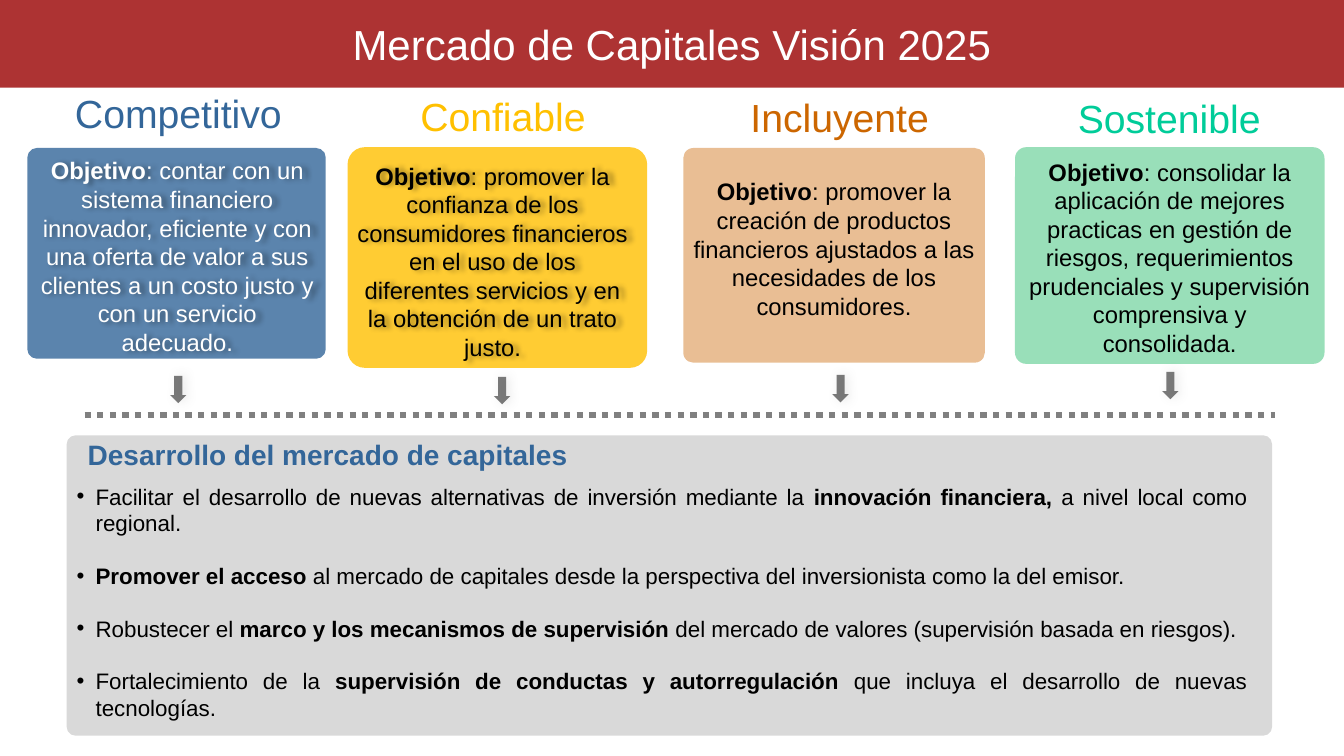
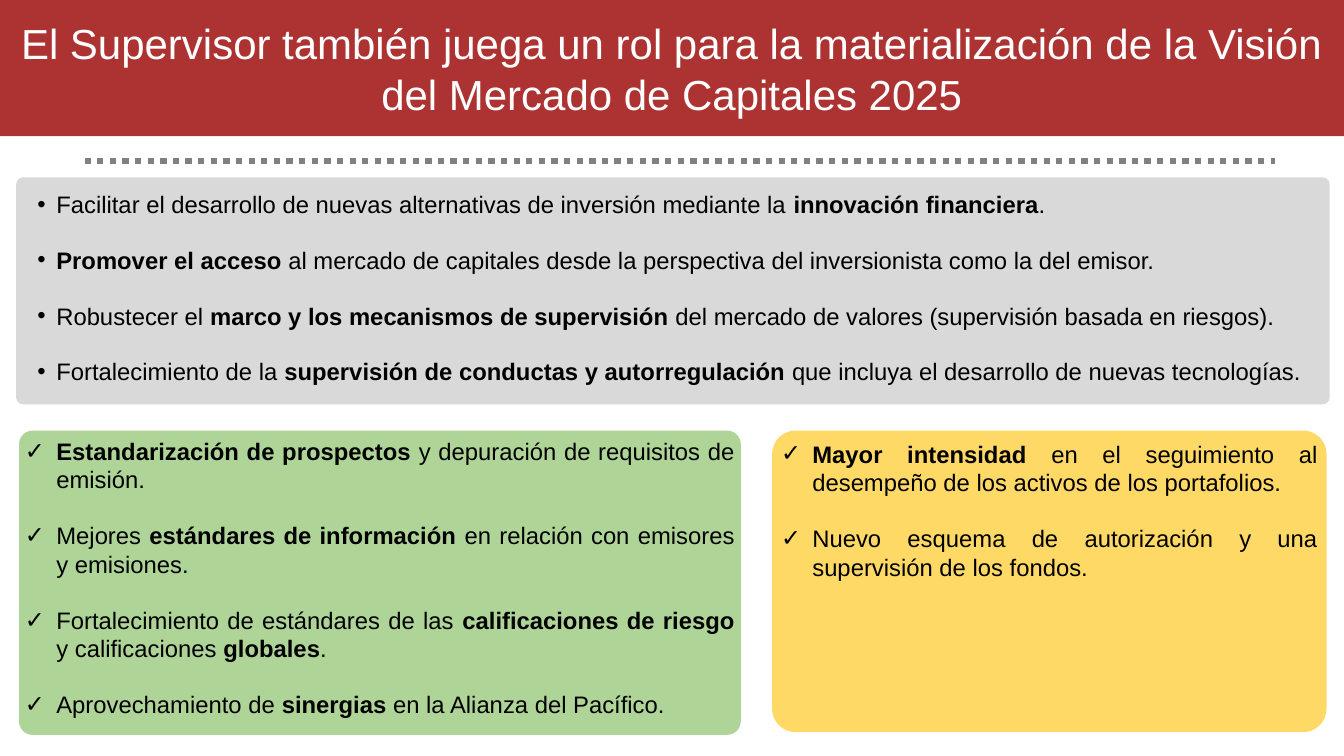
import lxml.etree
import pptx
import pptx.dml.color
import pptx.enum.shapes
import pptx.enum.text
import pptx.oxml.ns
import pptx.util

Cm = pptx.util.Cm
Pt = pptx.util.Pt
SHAPES = pptx.enum.shapes.MSO_SHAPE
ALIGN = pptx.enum.text.PP_ALIGN
ANCHOR = pptx.enum.text.MSO_ANCHOR
qn = pptx.oxml.ns.qn

SLIDE_WIDTH, SLIDE_HEIGHT = 33.87, 19.05
FONT = "Arial"
LINE_HEIGHT = 1.15
COLORS = {
    "band": "AD3333", "white": "FFFFFF", "black": "000000",
    "blue": "336699", "gold": "FFC000", "orange": "CC6600",
    "teal": "00CC99", "green": "00B050", "panel": "D9D9D9",
    "rule": "808080", "arrow": "595959", "shadow": "BFBFBF",
    "light green": "AFD498", "light gold": "FFD966",
}

# Heading, colour, heading box, card fill, opacity, card box, corner,
# objective, text colour, text box, text shadow, arrow position
PILLARS = [
    ("Competitivo", "blue", (0.61, 1.85, 7.77, 2.01),
     "blue", 80, (0.69, 3.73, 7.52, 5.31), 0.045,
     "contar con un sistema financiero innovador, eficiente y con una oferta "
     "de valor a sus clientes a un costo justo y con un servicio adecuado.",
     "white", (0.74, 3.81, 7.46, 2.84), True, (4.29, 9.47)),
    ("Confiable", "gold", (8.33, 1.75, 8.69, 2.34),
     "gold", 80, (8.76, 3.71, 7.55, 5.56), 0.078,
     "promover la confianza de los consumidores financieros en el uso de los "
     "diferentes servicios y en la obtención de un trato justo.",
     "black", (8.74, 3.94, 7.35, 2.84), True, (12.45, 9.5)),
    ("Incluyente", "orange", (17.78, 1.78, 6.76, 2.34),
     "orange", 42, (17.22, 3.73, 7.6, 5.41), 0.047,
     "promover la creación de productos financieros ajustados a las "
     "necesidades de los consumidores.",
     "black", (17.22, 4.34, 7.6, 2.84), False, (20.98, 9.45)),
    ("Sostenible", "teal", (25.58, 1.8, 7.77, 2.34),
     "green", 40, (25.58, 3.71, 7.8, 5.46), 0.052,
     "consolidar la aplicación de mejores practicas en gestión de riesgos, "
     "requerimientos prudenciales y supervisión comprensiva y consolidada.",
     "black", (25.58, 3.84, 7.8, 2.84), False, (29.29, 9.37)),
]

# Asterisks enclose bold text
INNOVATION = ("Facilitar el desarrollo de nuevas alternativas de inversión "
              "mediante la *innovación financiera")
SHARED_GOALS = [
    "*Promover el acceso* al mercado de capitales desde la perspectiva del "
    "inversionista como la del emisor.",
    "Robustecer el *marco y los mecanismos de supervisión* del mercado de "
    "valores (supervisión basada en riesgos).",
    "Fortalecimiento de la *supervisión de conductas y autorregulación* que "
    "incluya el desarrollo de nuevas tecnologías.",
]
ISSUER_ACTIONS = [
    "*Estandarización de prospectos* y depuración de requisitos de emisión.",
    "Mejores *estándares de información* en relación con emisores y emisiones.",
    "Fortalecimiento de estándares de las *calificaciones de riesgo* y "
    "calificaciones *globales*.",
    "Aprovechamiento de *sinergias* en la Alianza del Pacífico.",
]
FUND_ACTIONS = [
    "*Mayor intensidad* en el seguimiento al desempeño de los activos de los "
    "portafolios.",
    "Nuevo esquema de autorización y una supervisión de los fondos.",
]


def rgb(color):
    return pptx.dml.color.RGBColor.from_string(COLORS[color])


def add_alpha(color_element, percent):
    alpha = lxml.etree.SubElement(color_element, qn("a:alpha"))
    alpha.set("val", str(percent * 1000))


def add_shadow(shape, color, blur, distance):
    """Give a shape a soft shadow to its right."""
    shape.shadow.inherit = False
    effects = shape._element.spPr.find(qn("a:effectLst"))
    outer = lxml.etree.SubElement(effects, qn("a:outerShdw"))
    outer.set("blurRad", str(Pt(blur)))
    outer.set("dist", str(Pt(distance)))
    outer.set("dir", "0")
    tint = lxml.etree.SubElement(outer, qn("a:srgbClr"))
    tint.set("val", COLORS[color])
    add_alpha(tint, 40)


def add_filled_shape(slide, kind, box, color, opacity=100, corner=None):
    shape = slide.shapes.add_shape(kind, *map(Cm, box))
    shape.shadow.inherit = False
    shape.line.fill.background()
    shape.fill.solid()
    shape.fill.fore_color.rgb = rgb(color)
    if opacity < 100:
        add_alpha(shape._element.spPr.find(qn("a:solidFill"))[0], opacity)
    if corner is not None:
        shape.adjustments[0] = corner
    return shape


def write_paragraph(paragraph, text, size, color, align):
    """Write text whose bold parts stand between asterisks."""
    paragraph.alignment = align
    for index, part in enumerate(text.split("*")):
        if part:
            run = paragraph.add_run()
            run.text = part
            run.font.name = FONT
            run.font.size = Pt(size)
            run.font.bold = index % 2 == 1
            run.font.color.rgb = rgb(color)


def write_bullets(text_frame, items, size, bullet, indent):
    """Fill a frame with justified bullets, one empty line apart."""
    text_frame.vertical_anchor = ANCHOR.TOP
    for index, item in enumerate(items):
        paragraph = text_frame.paragraphs[0] if index == 0 else text_frame.add_paragraph()
        if index:
            paragraph.space_before = Pt(round(size * LINE_HEIGHT, 1))
        properties = paragraph._p.get_or_add_pPr()
        properties.set("marL", str(Cm(indent)))
        properties.set("indent", str(-Cm(indent)))
        bullet_color = lxml.etree.SubElement(properties, qn("a:buClr"))
        lxml.etree.SubElement(bullet_color, qn("a:srgbClr")).set("val", COLORS["black"])
        lxml.etree.SubElement(properties, qn("a:buFont")).set("typeface", FONT)
        lxml.etree.SubElement(properties, qn("a:buChar")).set("char", bullet)
        write_paragraph(paragraph, item, size, "black", ALIGN.JUSTIFY)


def add_text_box(slide, box):
    text_box = slide.shapes.add_textbox(*map(Cm, box))
    text_box.text_frame.word_wrap = True
    return text_box


def add_text(slide, box, text, size, color, align=ALIGN.CENTER, anchor=ANCHOR.TOP):
    text_box = add_text_box(slide, box)
    text_box.text_frame.vertical_anchor = anchor
    write_paragraph(text_box.text_frame.paragraphs[0], text, size, color, align)
    return text_box


def add_title_band(slide, title, height):
    band = add_filled_shape(slide, SHAPES.RECTANGLE, (0, 0, SLIDE_WIDTH, height), "band")
    band.text_frame.word_wrap = True
    band.text_frame.vertical_anchor = ANCHOR.MIDDLE
    write_paragraph(band.text_frame.paragraphs[0], title, 30, "white", ALIGN.CENTER)


def add_dotted_rule(slide, top):
    rule = slide.shapes.add_connector(pptx.enum.shapes.MSO_CONNECTOR.STRAIGHT,
                                      Cm(2.13), Cm(top), Cm(32.13), Cm(top))
    rule.line.color.rgb = rgb("rule")
    rule.line.width = Pt(4.5)
    rule.line.dash_style = pptx.enum.dml.MSO_LINE.ROUND_DOT
    lxml.etree.SubElement(rule._element.spPr, qn("a:effectLst"))


def add_goals_panel(slide, panel_box, text_box, goals, size):
    add_filled_shape(slide, SHAPES.ROUNDED_RECTANGLE, panel_box, "panel", corner=0.03)
    write_bullets(add_text_box(slide, text_box).text_frame, goals, size, "•", 0.48)


def add_action_card(slide, box, color, corner, actions):
    card = add_filled_shape(slide, SHAPES.ROUNDED_RECTANGLE, box, color, corner=corner)
    frame = card.text_frame
    frame.word_wrap = True
    frame.margin_left = frame.margin_right = Cm(0.05)
    frame.margin_top = frame.margin_bottom = Cm(0.05)
    write_bullets(frame, actions, 17, "✓", 0.79)


def add_pillar(slide, heading, heading_color, heading_box, fill, opacity, card_box,
               corner, objective, text_color, text_box, text_shadow, arrow_position):
    add_text(slide, heading_box, heading, 28, heading_color, anchor=ANCHOR.MIDDLE)
    arrow = add_filled_shape(slide, SHAPES.DOWN_ARROW, (*arrow_position, 0.41, 0.69),
                             "arrow", 80)
    add_shadow(arrow, "shadow", 7, 2)
    add_filled_shape(slide, SHAPES.ROUNDED_RECTANGLE, card_box, fill, opacity, corner)
    text = add_text(slide, text_box, f"*Objetivo*: {objective}", 17, text_color)
    if text_shadow:
        add_shadow(text, "black", 4, 3)


def build_vision_slide(slide):
    for pillar in PILLARS:
        add_pillar(slide, *pillar)
    add_title_band(slide, "Mercado de Capitales Visión 2025", 2.21)
    add_dotted_rule(slide, 10.45)
    add_goals_panel(slide, (1.68, 10.97, 30.38, 7.57), (1.68, 12.04, 30, 2.11),
                    [INNOVATION + ",* a nivel local como regional."] + SHARED_GOALS, 16)
    add_text(slide, (1.96, 10.9, 22.58, 1.02), "*Desarrollo del mercado de capitales*",
             20, "blue", align=ALIGN.LEFT)


def build_supervisor_slide(slide):
    add_title_band(slide, "El Supervisor también juega un rol para la materialización "
                          "de la Visión del Mercado de Capitales 2025", 3.43)
    add_dotted_rule(slide, 4.06)
    add_goals_panel(slide, (0.41, 4.47, 33.1, 5.72), (0.69, 4.65, 32.49, 5.54),
                    [INNOVATION + "*."] + SHARED_GOALS, 17)
    add_action_card(slide, (0.48, 10.85, 18.19, 7.67), "light green", 0.045, ISSUER_ACTIONS)
    add_action_card(slide, (19.46, 10.85, 13.97, 7.6), "light gold", 0.078, FUND_ACTIONS)


def main():
    presentation = pptx.Presentation()
    presentation.slide_width = Cm(SLIDE_WIDTH)
    presentation.slide_height = Cm(SLIDE_HEIGHT)
    blank_layout = presentation.slide_layouts[6]
    for build_slide in (build_vision_slide, build_supervisor_slide):
        build_slide(presentation.slides.add_slide(blank_layout))
    presentation.save("out.pptx")


if __name__ == "__main__":
    main()
